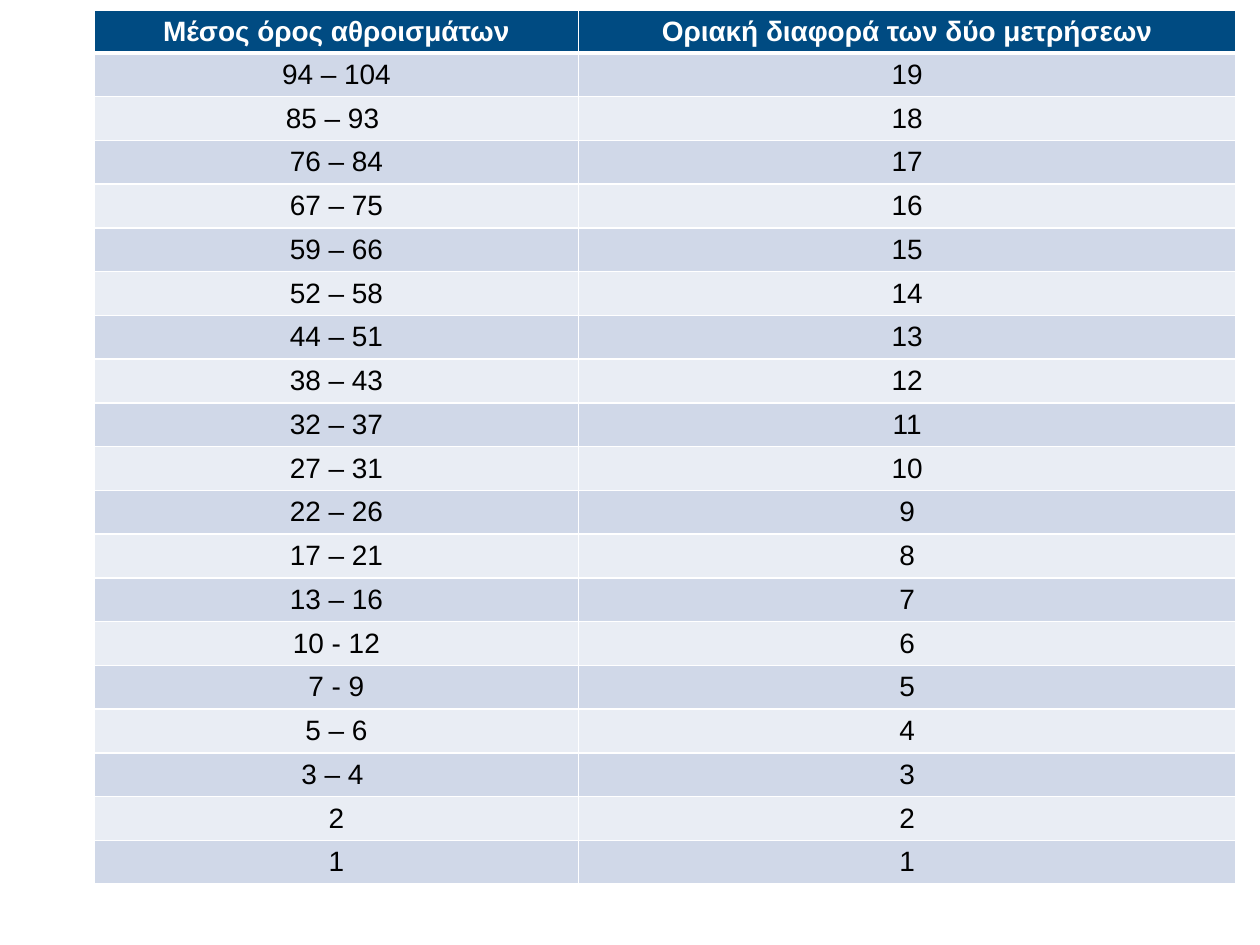
from lxml import etree
from pptx import Presentation, util as u
from pptx.dml import color
from pptx.enum import text
from pptx.oxml import ns

HEADINGS = ("Μέσος όρος αθροισμάτων", "Οριακή διαφορά των δύο μετρήσεων")
RANGES = ("94 – 104", "85 – 93 ", "76 – 84", "67 – 75", "59 – 66", "52 – 58",
          "44 – 51", "38 – 43", "32 – 37", "27 – 31", "22 – 26", "17 – 21",
          "13 – 16", "10 - 12", "7 - 9", "5 – 6", "3 – 4 ", "2", "1")


def rgb(value):
    return color.RGBColor.from_string(value)


class SlideBuilder:
    """Hold the table style and the current slide."""

    font, size = "Arial", 16
    header, bands, rule = "004B82", ("D0D8E8", "E9EDF4"), "FFFFFF"

    def __init__(self, deck):
        self.width, self.height = deck.slide_width, deck.slide_height
        self.page = deck.slides.add_slide(deck.slide_layouts[6])

    def border(self, cell, side, points):
        properties = cell._tc.get_or_add_tcPr()
        line = etree.SubElement(properties, ns.qn(f"a:ln{side}"), w=str(u.Pt(points)))
        fill = etree.SubElement(line, ns.qn("a:solidFill"))
        etree.SubElement(fill, ns.qn("a:srgbClr"), val=self.rule)

    def cell(self, cell, words, row):
        is_header = row == 0
        thick = {"T": row == 1, "B": is_header}
        for side in "LRTB":
            self.border(cell, side, 3 if thick.get(side) else 1)
        cell.fill.solid()
        cell.fill.fore_color.rgb = rgb(self.header if is_header else self.bands[(row - 1) % 2])
        cell.margin_top = cell.margin_bottom = u.Inches(0.04)
        cell.vertical_anchor = text.MSO_ANCHOR.MIDDLE
        para = cell.text_frame.paragraphs[0]
        para.alignment = text.PP_ALIGN.CENTER
        span = para.add_run()
        span.text = words
        span.font.name, span.font.size = self.font, u.Pt(self.size)
        span.font.bold = is_header
        span.font.color.rgb = rgb("FFFFFF" if is_header else "000000")

    def table(self, rows, left, top, column_shares, header_share, body_share):
        widths = [round(self.width * share) for share in column_shares]
        header_height = round(self.height * header_share)
        body_height = round(self.height * body_share)
        frame = self.page.shapes.add_table(
            len(rows), len(widths), round(self.width * left), round(self.height * top),
            sum(widths), header_height + body_height)
        grid = frame.table
        for column, width in zip(grid.columns, widths):
            column.width = width
        for index, (row, values) in enumerate(zip(grid.rows, rows)):
            row.height = body_height // (len(rows) - 1) if index else header_height
            for cell, words in zip(row.cells, values):
                self.cell(cell, words, index)


def main():
    deck = Presentation()
    deck.slide_width, deck.slide_height = u.Inches(10), u.Inches(7.5)
    limits = range(len(RANGES), 0, -1)
    rows = [HEADINGS, *((span, str(limit)) for span, limit in zip(RANGES, limits))]
    SlideBuilder(deck).table(rows, left=0.75 / 10, top=0.08 / 7.5,
                             column_shares=(3.84 / 10, 5.22 / 10),
                             header_share=0.34 / 7.5, body_share=6.6 / 7.5)
    deck.save("out.pptx")


if __name__ == "__main__":
    main()
